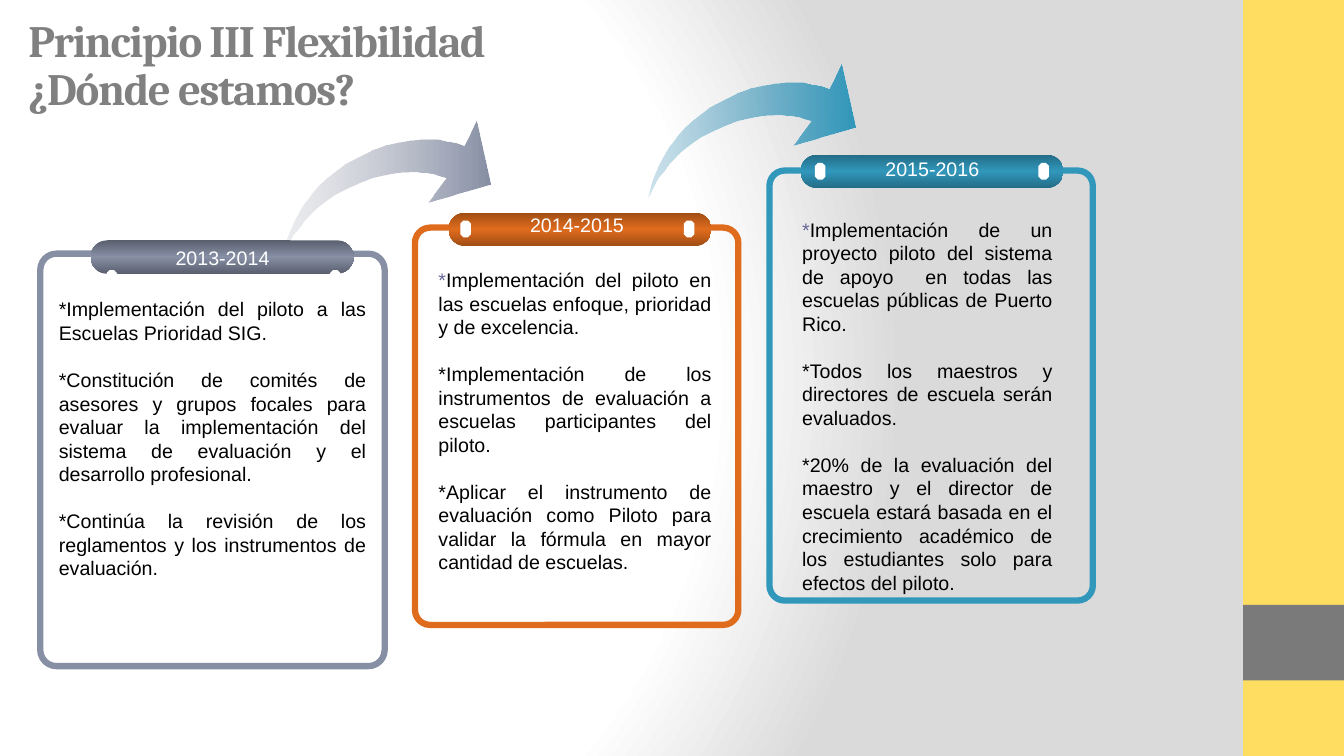
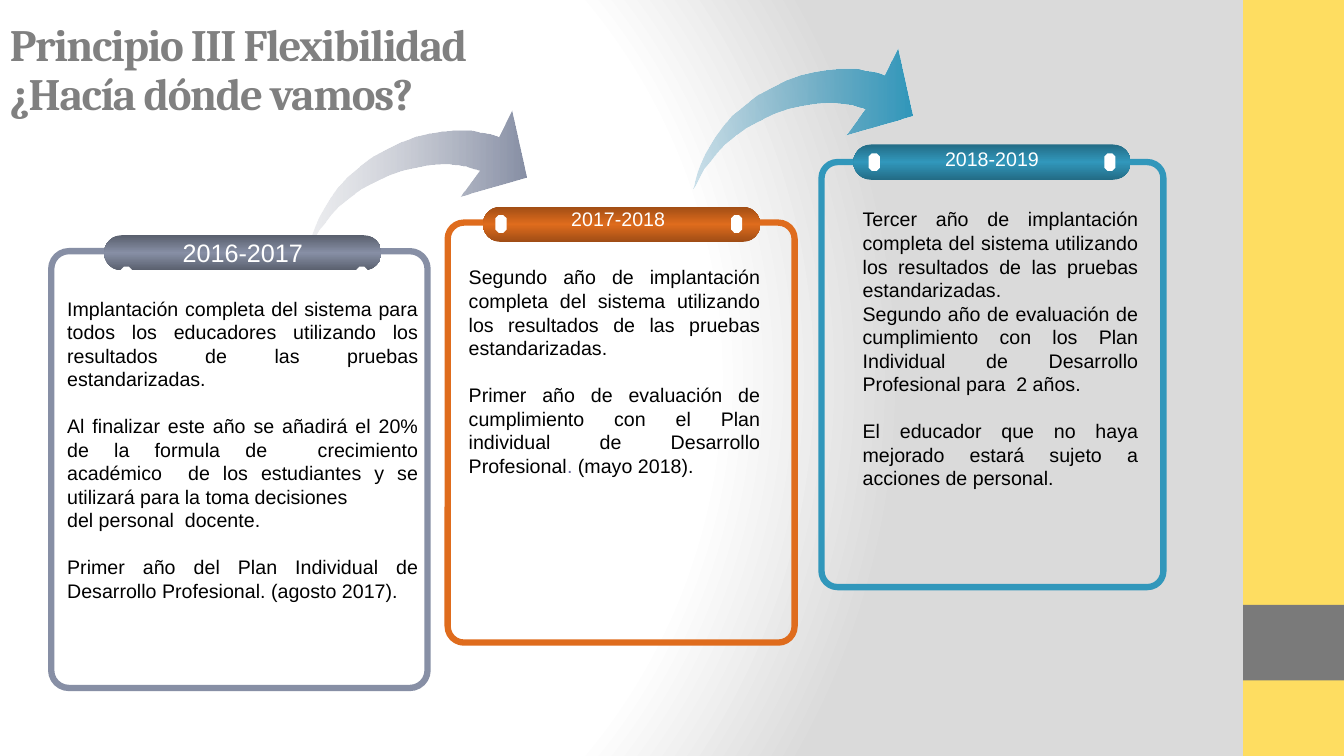
"""Builds two slides of stepped timeline cards about the flexibility principle."""
from dataclasses import dataclass

from lxml import etree
from pptx import Presentation
from pptx.dml.color import RGBColor
from pptx.enum.shapes import MSO_SHAPE
from pptx.enum.text import MSO_ANCHOR, PP_ALIGN
from pptx.oxml.ns import qn
from pptx.util import Emu, Pt

RECTANGLE = MSO_SHAPE.RECTANGLE
ROUNDED = MSO_SHAPE.ROUNDED_RECTANGLE
OCTAGON = MSO_SHAPE.OCTAGON
TOP, MIDDLE = MSO_ANCHOR.TOP, MSO_ANCHOR.MIDDLE
LEFT, CENTER, JUSTIFY = PP_ALIGN.LEFT, PP_ALIGN.CENTER, PP_ALIGN.JUSTIFY

COLUMNS, ROWS, CELL = 160, 90, 76200
ARROW_WIDTH, ARROW_HEIGHT = 217, 140
ARROW_OUTLINE = [
    (0, 140), (0, 139), (2, 136), (4, 132), (7, 126), (11, 119), (17, 112),
    (23, 104), (31, 95), (41, 87), (52, 79), (65, 72), (80, 65), (94, 60),
    (108, 57), (120, 55), (131, 54), (141, 54), (150, 55), (157, 56),
    (163, 58), (167, 59), (170, 60), (151, 86), (217, 67), (202, 0),
    (189, 27), (185, 25), (182, 24), (177, 23), (170, 22), (162, 20),
    (153, 20), (143, 20), (132, 21), (120, 23), (107, 26), (93, 31),
    (79, 38), (64, 46), (51, 56), (39, 66), (30, 76), (22, 87), (16, 97),
    (11, 106), (7, 115), (4, 123), (2, 130), (1, 135), (0, 139),
]


@dataclass
class Theme:
    """Colours of one card and the place of its clips as shares of the pill."""
    main: str
    dark: str
    clip_left: float
    clip_top: float
    arrow: str = ""


@dataclass
class Card:
    """Content and grid places of one card."""
    year: str
    frame: tuple
    pill: tuple
    label: tuple
    body: tuple
    blocks: list


THEMES = [
    Theme("878FA5", "595F6D", 0.06, 0.89, "C6C9D1"),
    Theme("DF6C1D", "A04D15", 0.045, 0.24),
    Theme("3197BB", "236C86", 0.055, 0.25, "62A4C2"),
]


def color(code):
    """Turn a hex string into a colour."""
    return RGBColor.from_string(code)


def cells(*lengths):
    """Turn grid cells into slide lengths."""
    return [Emu(round(length * CELL)) for length in lengths]


def set_gradient(fill, element, stops, angle=0, focus=None):
    """Fill with (position, colour, opacity) stops, linear or circular."""
    fill.gradient()
    gradient = element.find(".//" + qn("a:gradFill"))
    for child in list(gradient):
        gradient.remove(child)
    stop_list = etree.SubElement(gradient, qn("a:gsLst"))
    for position, code, opacity in stops:
        stop = etree.SubElement(stop_list, qn("a:gs"), pos=str(position * 1000))
        tint = etree.SubElement(stop, qn("a:srgbClr"), val=code)
        if opacity < 100:
            etree.SubElement(tint, qn("a:alpha"), val=str(opacity * 1000))
    if focus:
        circle = etree.SubElement(gradient, qn("a:path"), path="circle")
        sides = {side: str(share * 1000) for side, share in zip("ltrb", focus)}
        etree.SubElement(circle, qn("a:fillToRect"), **sides)
    else:
        etree.SubElement(gradient, qn("a:lin"), ang=str(angle * 60000), scaled="0")


class Painter:
    """Holds the shared style and draws on the current slide."""
    heading_font, text_font = "Cambria", "Arial"
    gray, white, black, accent = "808080", "FFFFFF", "000000", "666699"
    text_size, line_gap = 14, 16.8

    def __init__(self):
        """Open an empty deck on the grid."""
        self.deck = Presentation()
        self.deck.slide_width, self.deck.slide_height = cells(COLUMNS, ROWS)
        self.page = None

    def new_page(self):
        """Start a slide with its background and side bands."""
        self.page = self.deck.slides.add_slide(self.deck.slide_layouts[6])
        stops = [(0, self.white, 100), (75, self.white, 100), (100, "DADADA", 100)]
        set_gradient(self.page.background.fill, self.page.element, stops,
                     focus=(20, 50, 100, 50))
        self.shape(RECTANGLE, (148, 0, 12, ROWS), "FEDD61")
        self.shape(RECTANGLE, (148, 72, 12, 9), "7A7A7A")

    def shape(self, kind, place, fill=None, corner=None):
        """Draw a preset shape without outline or shadow."""
        shape = self.page.shapes.add_shape(kind, *cells(*place))
        shape.shadow.inherit = False
        shape.line.fill.background()
        if fill:
            shape.fill.solid()
            shape.fill.fore_color.rgb = color(fill)
        else:
            shape.fill.background()
        if corner is not None:
            shape.adjustments[0] = corner
        return shape

    def text_box(self, place, anchor=TOP):
        """Add a wrapping text box and return its frame."""
        frame = self.page.shapes.add_textbox(*cells(*place)).text_frame
        frame.word_wrap = True
        frame.vertical_anchor = anchor
        return frame

    def style(self, para, align, size, code, font=text_font, bold=False):
        """Format a paragraph and all its runs."""
        para.alignment = align
        for span in para.runs:
            span.font.name, span.font.size, span.font.bold = font, Pt(size), bold
            span.font.color.rgb = color(code)

    def title(self, text, left, top):
        """Write the two-line slide title."""
        frame = self.text_box((left, top, 83, 11), MIDDLE)
        frame.text = text
        para = frame.paragraphs[0]
        para.line_spacing = 0.9
        self.style(para, LEFT, 32, self.gray, self.heading_font, True)
        for span in para.runs:
            span.font._element.set("spc", "-100")

    def arrow(self, left, top, width, theme):
        """Draw a curved arrow that fades in towards its head."""
        scale = width * CELL / ARROW_WIDTH
        builder = self.page.shapes.build_freeform(*ARROW_OUTLINE[0], scale=scale)
        builder.add_line_segments(ARROW_OUTLINE[1:], close=True)
        arrow = builder.convert_to_shape(*cells(left, top))
        arrow.shadow.inherit = False
        arrow.line.fill.background()
        set_gradient(arrow.fill, arrow._element,
                     [(0, theme.arrow, 32), (100, theme.main, 100)])

    def year(self, card, pill):
        """Write the year in its label, or larger in the pill itself."""
        if card.label:
            frame, size = self.text_box((*card.label, 15.8, 4.2)), self.text_size
        else:
            frame, size = pill.text_frame, 18
            frame.word_wrap = False
            frame.vertical_anchor = MIDDLE
        frame.text = card.year
        self.style(frame.paragraphs[0], CENTER, size, self.white)

    def body(self, place, blocks):
        """Write spaced blocks of lines; text between bars is accented."""
        frame = self.text_box(place)
        frame.margin_left = cells(4.8)[0]
        para = frame.paragraphs[0]
        for index, block in enumerate(blocks):
            for number, line in enumerate(block.split("\n")):
                if index or number:
                    para = frame.add_paragraph()
                if index and not number:
                    para.space_before = Pt(self.line_gap)
                pieces = line.split("|")
                for piece in pieces:
                    para.add_run().text = piece
                self.style(para, JUSTIFY, self.text_size, self.black)
                for span in para.runs[1::2]:
                    span.font.color.rgb = color(self.accent)
                for span in para.runs:
                    if not span.text:
                        para._p.remove(span._r)

    def card(self, card, theme, pill_size):
        """Draw a framed card with its pill, clips, year and text."""
        frame = self.shape(ROUNDED, card.frame, corner=0.047)
        frame.line.color.rgb = color(theme.main)
        frame.line.width = Pt(4.5)
        (left, top), (width, height) = card.pill, pill_size
        pill = self.shape(ROUNDED, (left, top, width, height), corner=0.5)
        set_gradient(pill.fill, pill._element, [
            (0, theme.dark, 100), (50, theme.main, 100), (100, theme.dark, 100)], 90)
        for share in (theme.clip_left, theme.clip_left + 0.85):
            place = (left + share * width, top + theme.clip_top * height,
                     0.04 * width, height / 2)
            self.shape(OCTAGON, place, self.white, 0.29)
        self.year(card, pill)
        self.body(card.body, card.blocks)

    def timeline(self, title, title_place, arrows, arrow_width, pill_size, cards):
        """Build one whole slide."""
        self.new_page()
        self.title(title, *title_place)
        for place, theme in zip(arrows, THEMES[::2]):
            self.arrow(*place, arrow_width, theme)
        for card, theme in zip(cards, THEMES):
            self.card(card, theme, pill_size)


CURRENT_CARDS = [
    Card("2013-2014", (4.8, 30.2, 41, 49.1), (10.8, 28.6), (18.6, 28.7),
         (2.2, 34.8, 42.6, 33.2), [
             "*Implementación del piloto a las Escuelas Prioridad SIG.",
             "*Constitución de comités de asesores y grupos focales para evaluar la "
             "implementación del sistema de evaluación y el desarrollo profesional.",
             "*Continúa la revisión de los reglamentos y los instrumentos de evaluación."]),
    Card("2014-2015", (49.4, 27.1, 38.5, 47.3), (53.4, 25.3), (60.8, 24.8),
         (47.4, 31.3, 38.5, 35.9), [
             "|*|Implementación del piloto en las escuelas enfoque, prioridad y de "
             "excelencia.",
             "*Implementación de los instrumentos de evaluación a escuelas "
             "participantes del piloto.",
             "*Aplicar el instrumento de evaluación como Piloto para validar la "
             "fórmula en mayor cantidad de escuelas."]),
    Card("2015-2016", (91.6, 20.3, 38.5, 51.2), (95.3, 18.4), (103.1, 18.1),
         (90.7, 25.3, 35.8, 46.4), [
             "|*|Implementación de un proyecto piloto del sistema de apoyo  en todas "
             "las escuelas públicas de Puerto Rico.",
             "*Todos los maestros y directores de escuela serán evaluados.",
             "*20% de la evaluación del maestro y el director de escuela estará basada "
             "en el crecimiento académico de los estudiantes solo para efectos del "
             "piloto."]),
]

FUTURE_CARDS = [
    Card("2016-2017", (6.1, 29.9, 44.8, 52), (12.4, 28), (),
         (3.2, 34.7, 47.8, 37.9), [
             "Implantación completa del sistema para todos los educadores utilizando "
             "los resultados de las pruebas estandarizadas.",
             "Al finalizar este año se añadirá el 20% de la formula de  crecimiento "
             "académico  de los estudiantes y se utilizará para la toma decisiones\n"
             "del personal  docente.",
             "Primer año del Plan Individual de Desarrollo Profesional. (agosto 2017)."]),
    Card("2017-2018", (53.3, 26.5, 41.3, 50), (57.5, 24.6), (65.7, 24.1),
         (51, 31, 40.7, 26.6), [
             "Segundo año de implantación completa del sistema utilizando los "
             "resultados de las pruebas estandarizadas.",
             "Primer año de evaluación de cumplimiento con el Plan individual de "
             "Desarrollo Profesional|. |(mayo 2018)."]),
    Card("2018-2019", (97.8, 19.3, 40.7, 50.6), (101.6, 17.2), (110.2, 16.9),
         (97.9, 24.1, 38.8, 37.9), [
             "Tercer año de implantación completa del sistema utilizando los "
             "resultados de las pruebas estandarizadas.\n"
             "Segundo año de evaluación de cumplimiento con los Plan Individual de "
             "Desarrollo Profesional para  2 años.",
             "El educador que no haya mejorado estará sujeto a acciones de personal."]),
]


def main():
    """Build and save the deck."""
    painter = Painter()
    painter.timeline("Principio III Flexibilidad\v¿Dónde estamos?", (2.2, 2.5),
                     [(33.8, 14.4), (77.2, 7.6)], 24.6, (31.3, 4), CURRENT_CARDS)
    painter.timeline("Principio III Flexibilidad\v¿Hacía dónde vamos?", (0, 3),
                     [(36.7, 13.1), (82.6, 5.8)], 26, (33, 4.2), FUTURE_CARDS)
    painter.deck.save("out.pptx")


if __name__ == "__main__":
    main()
